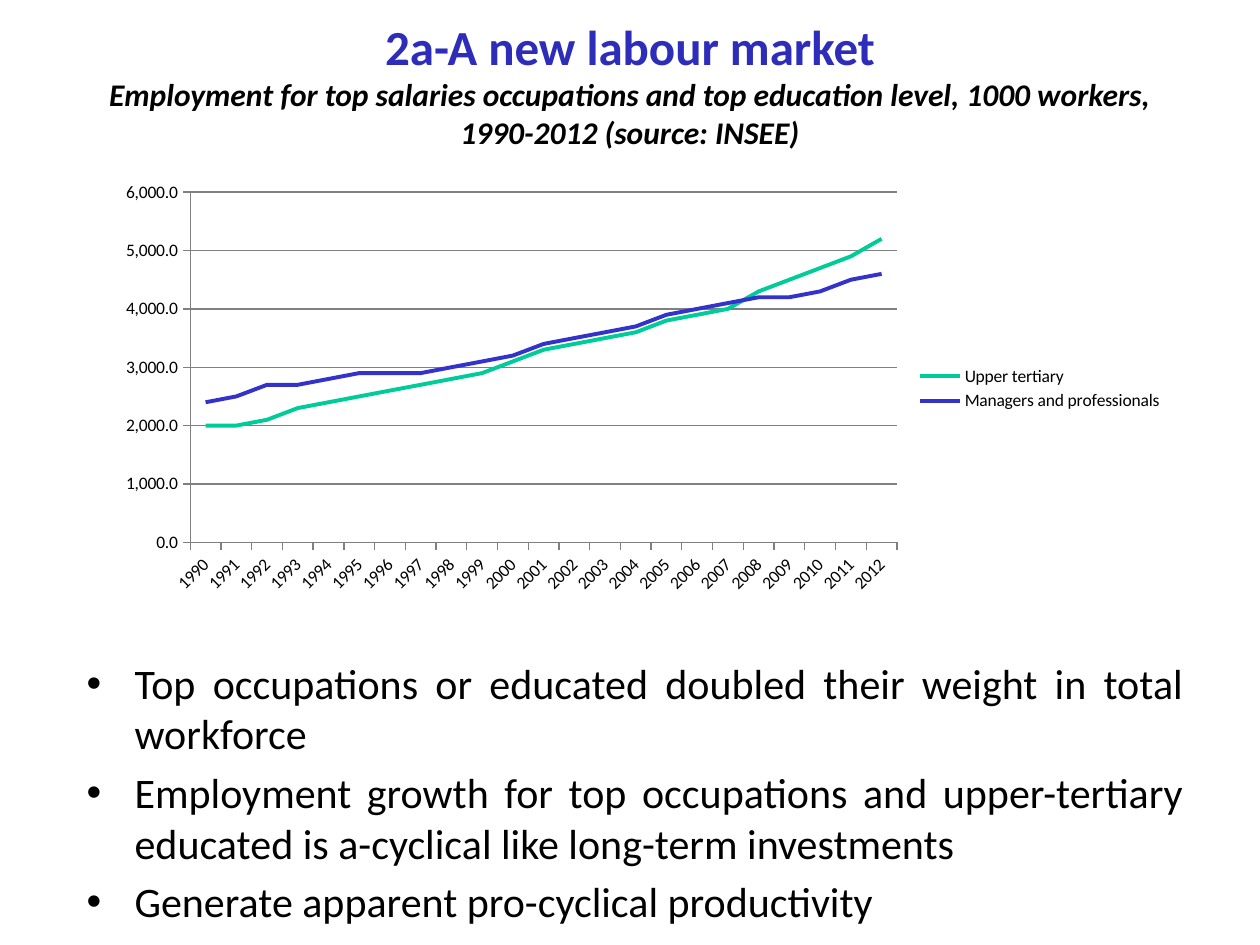
from lxml import etree
from pptx import Presentation
from pptx.chart.data import CategoryChartData as ChartData
from pptx.dml.color import RGBColor
from pptx.enum.chart import XL_CHART_TYPE as ChartType
from pptx.enum.chart import XL_LEGEND_POSITION as LegendPosition
from pptx.enum.chart import XL_TICK_MARK as TickMark
from pptx.enum.text import MSO_ANCHOR as Anchor
from pptx.enum.text import PP_ALIGN as Align
from pptx.oxml import parse_xml
from pptx.oxml.ns import nsdecls, qn
from pptx.util import Inches, Pt

BLACK = RGBColor(0x00, 0x00, 0x00)
TITLE_BLUE = RGBColor(0x2D, 0x2D, 0xB9)
GREEN = RGBColor(0x00, 0xCC, 0x99)
BLUE = RGBColor(0x33, 0x33, 0xCC)
GREY = RGBColor(0x80, 0x80, 0x80)
FONT = "Calibri"

TITLE = "2a-A new labour market"
SUBTITLE = ("Employment for top salaries occupations and top education level, "
            "1000 workers, 1990-2012 (source: INSEE)")
BULLETS = [
    "Top occupations or educated doubled their weight in total workforce",
    "Employment growth for top occupations and upper-tertiary educated "
    "is a-cyclical like long-term investments",
    "Generate apparent pro-cyclical productivity",
]
YEARS = [str(year) for year in range(1990, 2013)]
SERIES = [
    ("Upper tertiary", GREEN,
     [2000, 2000, 2100, 2300, 2400, 2500, 2600, 2700, 2800, 2900, 3100, 3300,
      3400, 3500, 3600, 3800, 3900, 4000, 4300, 4500, 4700, 4900, 5200]),
    ("Managers and professionals", BLUE,
     [2400, 2500, 2700, 2700, 2800, 2900, 2900, 2900, 3000, 3100, 3200, 3400,
      3500, 3600, 3700, 3900, 4000, 4100, 4200, 4200, 4300, 4500, 4600]),
]
PLOT_LAYOUT = {"x": 0.08, "y": 0.04, "w": 0.66, "h": 0.82}


def set_attributes(target, values):
    for name, value in values.items():
        setattr(target, name, value)


def format_font(font, size, color, **styles):
    set_attributes(font, {"name": FONT, "size": Pt(size), **styles})
    font.color.rgb = color


def format_line(line, color, width):
    line.color.rgb = color
    line.width = Pt(width)


def add_title(slide):
    title = slide.shapes.title
    set_attributes(title, {"left": Inches(0.75), "top": Inches(0.08),
                           "width": Inches(8.5), "height": Inches(1.25)})
    title.text_frame.vertical_anchor = Anchor.TOP
    paragraph = title.text_frame.paragraphs[0]
    paragraph.alignment = Align.CENTER
    heading = paragraph.add_run()
    heading.text = TITLE
    format_font(heading.font, 28, TITLE_BLUE, bold=True)
    paragraph.add_line_break()
    subtitle = paragraph.add_run()
    subtitle.text = SUBTITLE
    format_font(subtitle.font, 18, BLACK, bold=True, italic=True)


def set_plot_layout(chart):
    """Fix the inner plot area as fractions of the chart frame."""
    edges = "".join(f'<c:{key}Mode val="edge"/>' for key in "xy")
    sizes = "".join(f'<c:{key} val="{value}"/>' for key, value in PLOT_LAYOUT.items())
    layout = parse_xml(
        f'<c:layout {nsdecls("c")}><c:manualLayout><c:layoutTarget val="inner"/>'
        f"{edges}{sizes}</c:manualLayout></c:layout>")
    plot_area = chart.element.find(f".//{qn('c:plotArea')}")
    for existing in plot_area.findall(qn("c:layout")):
        plot_area.remove(existing)
    plot_area.insert(0, layout)


def format_axes(chart):
    for axis in (chart.category_axis, chart.value_axis):
        set_attributes(axis, {"major_tick_mark": TickMark.OUTSIDE,
                              "minor_tick_mark": TickMark.NONE})
        format_line(axis.format.line, GREY, 0.75)
        format_font(axis.tick_labels.font, 10, BLACK)
    category_axis = chart.element.find(f".//{qn('c:catAx')}")
    category_axis.find(f"{qn('c:txPr')}/{qn('a:bodyPr')}").set("rot", "-2700000")
    set_attributes(chart.value_axis, {"minimum_scale": 0, "maximum_scale": 6000,
                                      "major_unit": 1000, "has_major_gridlines": True})
    set_attributes(chart.value_axis.tick_labels,
                   {"number_format": "#,##0.0", "number_format_is_linked": False})
    format_line(chart.value_axis.major_gridlines.format.line, GREY, 0.75)


def add_employment_chart(slide):
    data = ChartData()
    data.categories = YEARS
    for name, _, values in SERIES:
        data.add_series(name, values)
    chart = slide.shapes.add_chart(
        ChartType.LINE, Inches(0.83), Inches(1.39), Inches(8.5), Inches(3.39), data).chart
    set_attributes(chart, {"has_title": False, "has_legend": True})
    format_font(chart.font, 10, BLACK)
    set_attributes(chart.legend, {"position": LegendPosition.RIGHT,
                                  "include_in_layout": False})
    chart.plots[0].vary_by_categories = False
    for series, (_, color, _) in zip(chart.plots[0].series, SERIES):
        series.smooth = False
        format_line(series.format.line, color, 2.25)
    format_axes(chart)
    set_plot_layout(chart)


def add_bullet_marker(paragraph):
    properties = paragraph._p.get_or_add_pPr()
    properties.set("marL", str(Inches(0.38)))
    properties.set("indent", str(Inches(-0.38)))
    etree.SubElement(properties, qn("a:buFont")).set("typeface", "Arial")
    etree.SubElement(properties, qn("a:buChar")).set("char", "•")


def add_bullets(slide):
    box = slide.shapes.add_textbox(Inches(0.59), Inches(5.17), Inches(8.9), Inches(1.5))
    frame = box.text_frame
    frame.word_wrap = True
    for index, text in enumerate(BULLETS):
        paragraph = frame.add_paragraph() if index else frame.paragraphs[0]
        set_attributes(paragraph, {"alignment": Align.JUSTIFY, "space_before": Pt(4.8)})
        add_bullet_marker(paragraph)
        run = paragraph.add_run()
        run.text = text
        format_font(run.font, 24, BLACK)


def main():
    presentation = Presentation()
    set_attributes(presentation, {"slide_width": Inches(10), "slide_height": Inches(7.5)})
    slide = presentation.slides.add_slide(presentation.slide_layouts[5])
    add_title(slide)
    add_employment_chart(slide)
    add_bullets(slide)
    presentation.save("out.pptx")


if __name__ == "__main__":
    main()
